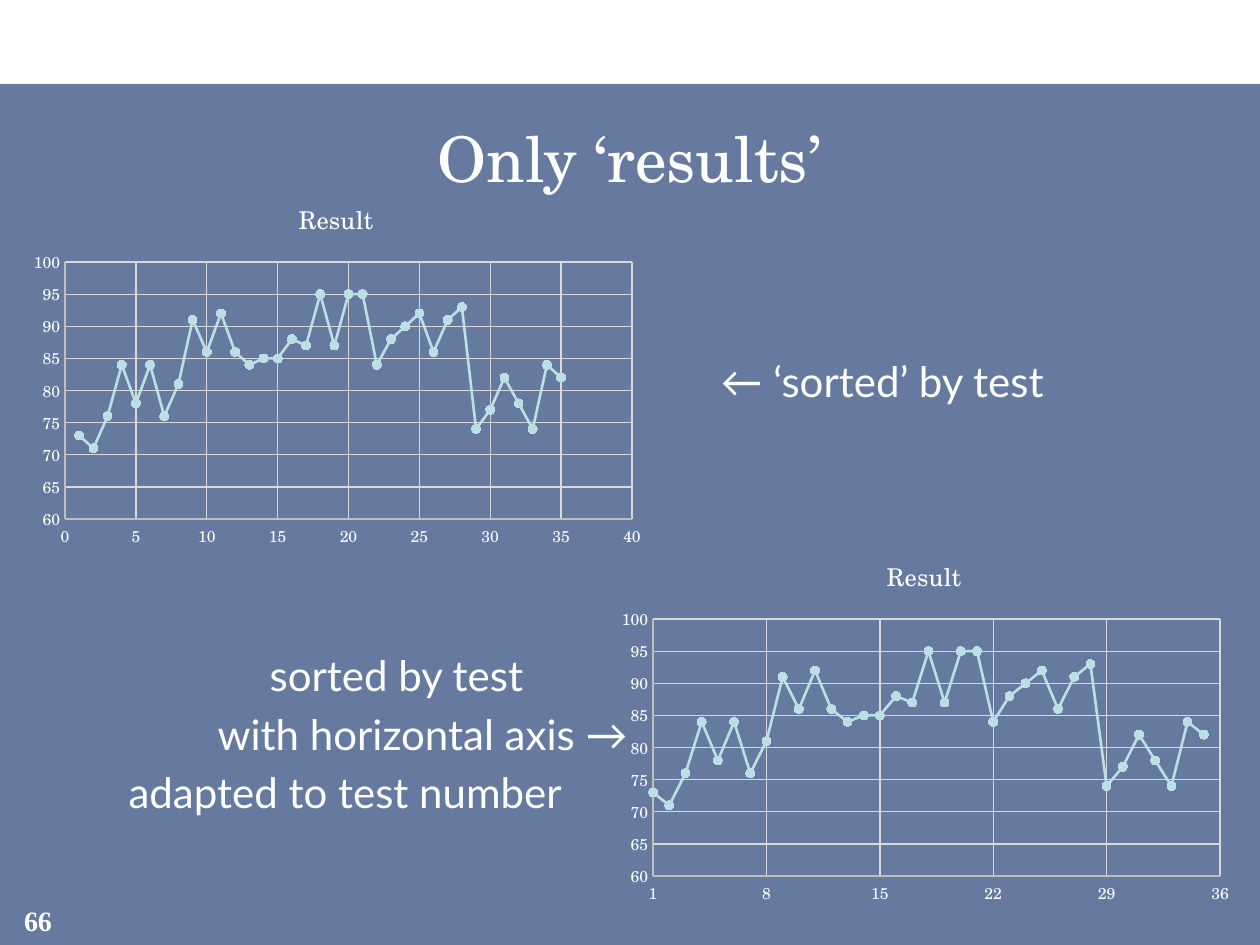
"""Build the "Only 'results'" slide: two scatter charts with their captions."""
from lxml.etree import SubElement
from pptx import Presentation
from pptx.chart.data import XyChartData
from pptx.dml.color import RGBColor
from pptx.enum.chart import XL_CHART_TYPE as ChartType
from pptx.enum.chart import XL_MARKER_STYLE as Marker
from pptx.enum.chart import XL_TICK_MARK as TickMark
from pptx.enum.shapes import MSO_SHAPE as Shape
from pptx.enum.text import MSO_ANCHOR as Anchor
from pptx.enum.text import MSO_AUTO_SIZE as AutoSize
from pptx.enum.text import PP_ALIGN as Align
from pptx.oxml import parse_xml
from pptx.oxml.ns import nsdecls, qn
from pptx.util import Emu, Pt

COLORS = {"panel": "002060", "text": "FFFFFF", "axis": "BFBFBF",
          "grid": "D9D9D9", "series": "BBE0E3"}
SERIF, SANS, NUMBER_FONT = "TeX Gyre Schola", "Lato", "Times New Roman"
EMU_PER_PX = 914400 / 126

TITLE = "Only ‘results’"
PAGE_NUMBER = "66"
SERIES_NAME = "Result"
RESULTS = [73, 71, 76, 84, 78, 84, 76, 81, 91, 86, 92, 86, 84, 85, 85, 88, 87, 95,
           87, 95, 95, 84, 88, 90, 92, 86, 91, 93, 74, 77, 82, 78, 74, 84, 82]
CAPTIONS = [
    {"text": "← ‘sorted’ by test", "indent": 677, "before": 0},
    {"text": "sorted by test", "indent": 226, "before": 139.2},
    {"text": "with horizontal axis →", "indent": 174, "before": 4.8},
    {"text": "adapted to test number", "indent": 85, "before": 4.8},
]
CHARTS = [
    {"box": (21, 179, 630, 378), "x_scale": (0, 40, 5)},
    {"box": (609, 536, 630, 378), "x_scale": (1, 36, 7)},
]
Y_SCALE = (60, 100, 5)
PLOT_AREA = {"x": 0.07, "y": 0.22, "w": 0.9, "h": 0.68}


def px(value):
    return Emu(round(value * EMU_PER_PX))


def rgb(name):
    return RGBColor.from_string(COLORS[name])


def style_font(font, size, face, bold=False):
    font.size, font.name, font.bold = Pt(size), face, bold
    font.color.rgb = rgb("text")


def style_line(line, color, width):
    line.color.rgb = rgb(color)
    line.width = Pt(width)


def place(shape, left, top, width, height):
    shape.left, shape.top = px(left), px(top)
    shape.width, shape.height = px(width), px(height)


def write(para, text, size, face, bold=False, align=Align.LEFT, before=0):
    para.alignment = align
    para.space_before = Pt(before)
    span = para.add_run()
    span.text = text
    style_font(span.font, size, face, bold)


def add_panel(page):
    panel = page.shapes.add_shape(Shape.RECTANGLE, px(0), px(84), px(1260), px(861))
    panel.shadow.inherit = False
    panel.fill.solid()
    panel.fill.fore_color.rgb = rgb("panel")
    panel.line.fill.background()
    color = panel.fill._xPr.find(".//" + qn("a:srgbClr"))
    SubElement(color, qn("a:alpha")).set("val", "60000")
    page.shapes._spTree.insert(2, panel._element)


def add_captions(body):
    place(body, 31, 349, 1197, 565)
    frame = body.text_frame
    frame.auto_size = AutoSize.NONE
    for index, caption in enumerate(CAPTIONS):
        para = frame.add_paragraph() if index else frame.paragraphs[0]
        properties = para._p.get_or_add_pPr()
        properties.set("marL", str(px(caption["indent"])))
        properties.set("indent", "0")
        SubElement(properties, qn("a:buNone"))
        write(para, caption["text"], 24, SANS, before=caption["before"])


def style_axis(axis, scale):
    axis.minimum_scale, axis.maximum_scale, axis.major_unit = scale
    axis.major_tick_mark = axis.minor_tick_mark = TickMark.NONE
    axis.has_major_gridlines = True
    style_line(axis.major_gridlines.format.line, "grid", 0.75)
    style_line(axis.format.line, "axis", 0.75)
    style_font(axis.tick_labels.font, 9, SERIF)


def set_plot_area(chart):
    area = chart._chartSpace.find(".//" + qn("c:plotArea"))
    for layout in area.findall(qn("c:layout")):
        area.remove(layout)
    modes = '<c:layoutTarget val="inner"/><c:xMode val="edge"/><c:yMode val="edge"/>'
    sizes = "".join(f'<c:{key} val="{value}"/>' for key, value in PLOT_AREA.items())
    area.insert(0, parse_xml(f'<c:layout {nsdecls("c")}><c:manualLayout>'
                             f'{modes}{sizes}</c:manualLayout></c:layout>'))


def add_result_chart(page, box, x_scale):
    data = XyChartData()
    points = data.add_series(SERIES_NAME)
    for test, result in enumerate(RESULTS, 1):
        points.add_data_point(test, result)
    chart = page.shapes.add_chart(ChartType.XY_SCATTER_LINES, *map(px, box), data).chart
    style_font(chart.font, 10, SERIF)
    chart.has_legend = False
    chart.has_title = True
    chart.chart_title.include_in_layout = False
    write(chart.chart_title.text_frame.paragraphs[0], SERIES_NAME, 14, SERIF,
          align=Align.CENTER)
    style_axis(chart.category_axis, x_scale)
    style_axis(chart.value_axis, Y_SCALE)
    chart.plots[0].vary_by_categories = False
    series = chart.plots[0].series[0]
    series.smooth = False
    style_line(series.format.line, "series", 1.5)
    series.marker.style, series.marker.size = Marker.CIRCLE, 5
    series.marker.format.fill.solid()
    series.marker.format.fill.fore_color.rgb = rgb("series")
    style_line(series.marker.format.line, "series", 0.75)
    set_plot_area(chart)


def main():
    deck = Presentation()
    deck.slide_width, deck.slide_height = px(1260), px(945)
    page = deck.slides.add_slide(deck.slide_layouts[1])
    add_panel(page)

    title = page.shapes.title
    place(title, 31, 105, 1197, 105)
    title.text_frame.auto_size = AutoSize.NONE
    title.text_frame.vertical_anchor = Anchor.MIDDLE
    write(title.text_frame.paragraphs[0], TITLE, 36, SERIF, align=Align.CENTER)
    add_captions(page.placeholders[1])

    number = page.shapes.add_textbox(px(0), px(895), px(76), px(50)).text_frame
    number.word_wrap = True
    number.vertical_anchor = Anchor.MIDDLE
    write(number.paragraphs[0], PAGE_NUMBER, 16, NUMBER_FONT, bold=True,
          align=Align.CENTER)

    for chart in CHARTS:
        add_result_chart(page, **chart)
    deck.save("out.pptx")


if __name__ == "__main__":
    main()
